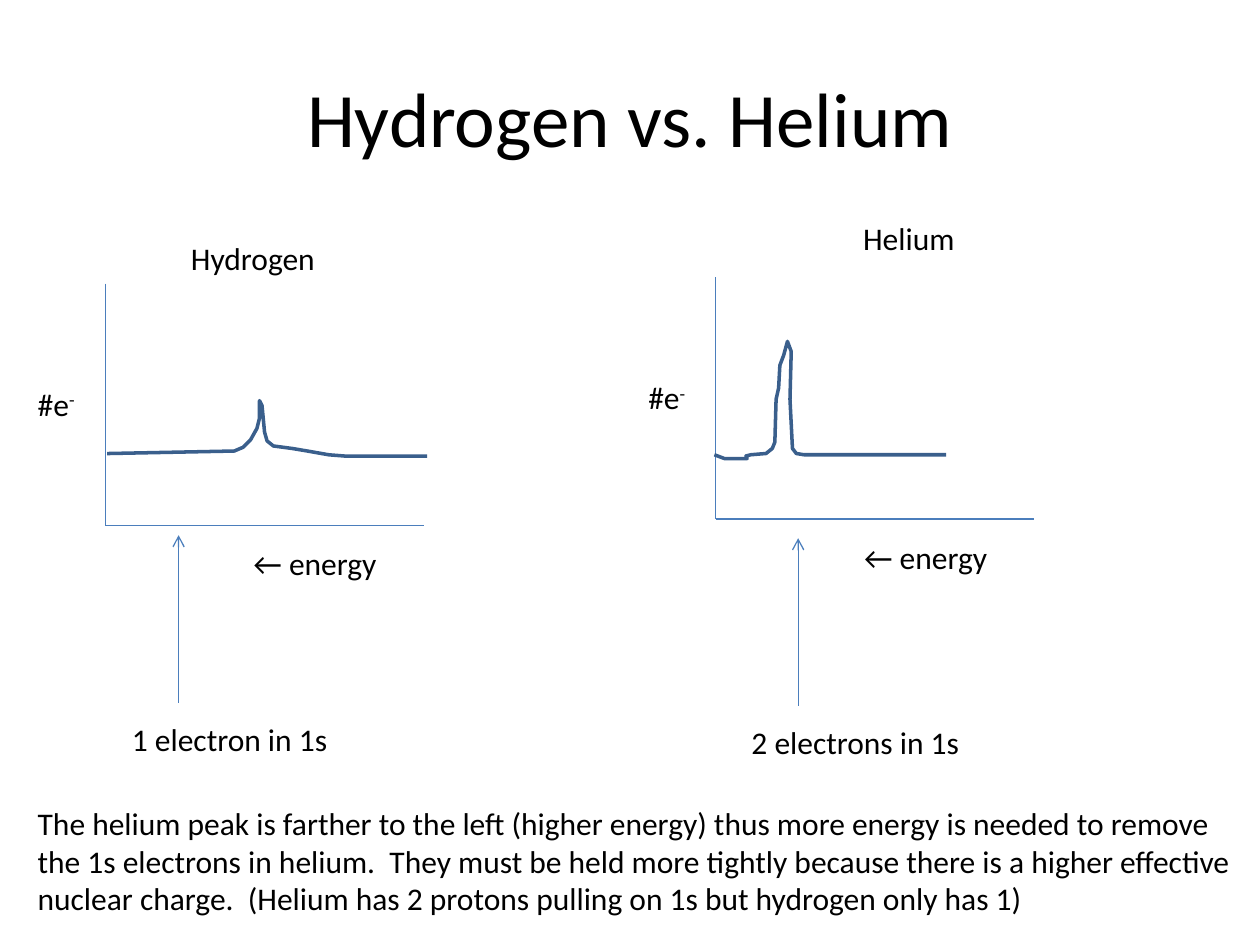
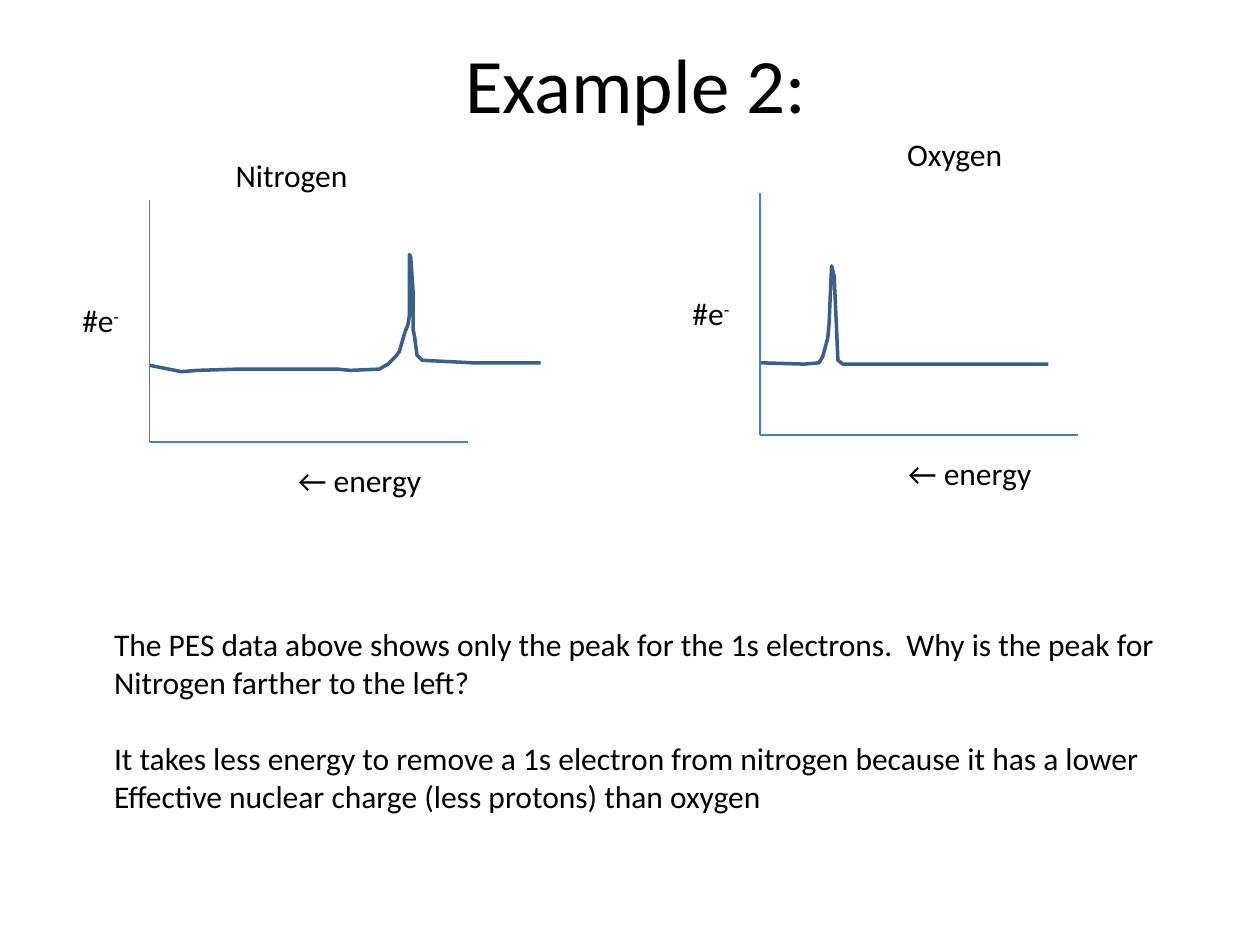
import lxml.etree
import pptx
import pptx.dml.color
import pptx.enum.shapes
import pptx.enum.text
import pptx.oxml.ns
import pptx.util
from pptx.util import Cm

FONT = "Calibri"
COLORS = {"text": "000000", "axis": "4B7EBC", "peak": "3A5F8C"}
TITLE_SIZE, TEXT_SIZE = 44, 18
LINE_HEIGHT = Cm(1.02)
AXIS_WIDTH, AXIS_HEIGHT = 6.42, 4.87
SPECTRUM_UNIT = Cm(2.54) / 100

# Points of each spectrum on the slide, in hundredths of 2.54 cm.
HYDROGEN = [
    (85, 360), (186, 358), (193, 355), (199, 349), (204, 340), (206, 332),
    (206, 318), (208, 322), (210, 343), (212, 350), (217, 354), (232, 356),
    (244, 358), (261, 361), (274, 362), (339, 362),
]
HELIUM = [
    (567, 361), (575, 364), (593, 364), (592, 362), (596, 361), (608, 360),
    (613, 356), (615, 351), (616, 317), (618, 308), (619, 290), (622, 282),
    (625, 271), (628, 279), (627, 317), (629, 356), (632, 360), (638, 361),
    (751, 361),
]
NITROGEN = [
    (119, 290), (144, 295), (157, 294), (189, 293), (268, 293), (278, 294),
    (301, 293), (308, 289), (314, 283), (317, 279), (321, 265), (324, 257),
    (325, 250), (325, 202), (326, 204), (328, 233), (328, 262), (329, 267),
    (331, 282), (335, 286), (375, 288), (429, 288),
]
OXYGEN = [
    (604, 288), (638, 289), (650, 288), (653, 283), (657, 268), (658, 257),
    (659, 234), (660, 211), (662, 219), (664, 262), (665, 286), (669, 289),
    (832, 289),
]


def rgb(name):
    return pptx.dml.color.RGBColor.from_string(COLORS[name])


def add_run(paragraph, text, size=TEXT_SIZE):
    run = paragraph.add_run()
    run.text = text
    run.font.name = FONT
    run.font.size = pptx.util.Pt(size)
    run.font.color.rgb = rgb("text")
    return run


def add_titled_slide(deck, title, left, top):
    slide = deck.slides.add_slide(deck.slide_layouts[5])
    heading = slide.shapes.title
    heading.left, heading.top = Cm(left), Cm(top)
    heading.width, heading.height = Cm(22.86), Cm(3.18)
    paragraph = heading.text_frame.paragraphs[0]
    paragraph.alignment = pptx.enum.text.PP_ALIGN.CENTER
    add_run(paragraph, title, TITLE_SIZE)
    return slide


def add_text(slide, left, top, width, lines, height=LINE_HEIGHT):
    """Add unwrapped text, one paragraph a line, and return its paragraphs."""
    frame = slide.shapes.add_textbox(Cm(left), Cm(top), Cm(width), height).text_frame
    frame.word_wrap = False
    frame.auto_size = pptx.enum.text.MSO_AUTO_SIZE.SHAPE_TO_FIT_TEXT
    for index, line in enumerate(lines):
        paragraph = frame.add_paragraph() if index else frame.paragraphs[0]
        add_run(paragraph, line)
    return frame.paragraphs


def add_line(slide, x1, y1, x2, y2, arrow=False):
    line = slide.shapes.add_connector(
        pptx.enum.shapes.MSO_CONNECTOR.STRAIGHT, Cm(x1), Cm(y1), Cm(x2), Cm(y2))
    line.line.color.rgb = rgb("axis")
    line.line.width = pptx.util.Pt(0.75)
    properties = line._element.spPr
    if arrow:
        outline = properties.find(pptx.oxml.ns.qn("a:ln"))
        lxml.etree.SubElement(outline, pptx.oxml.ns.qn("a:tailEnd"), type="arrow")
    lxml.etree.SubElement(properties, pptx.oxml.ns.qn("a:effectLst"))


def add_spectrum(slide, points):
    builder = slide.shapes.build_freeform(*points[0], scale=SPECTRUM_UNIT)
    builder.add_line_segments(points[1:], close=False)
    spectrum = builder.convert_to_shape()
    spectrum.shadow.inherit = False
    spectrum.fill.background()
    spectrum.line.color.rgb = rgb("peak")
    spectrum.line.width = pptx.util.Pt(2)


def add_graph(slide, left, top, element, element_offset, element_width, points):
    """Draw axes from their top left corner, with labels and the spectrum."""
    bottom = top + AXIS_HEIGHT
    dx, dy = element_offset
    add_text(slide, left + dx, top + dy, element_width, [element])
    add_line(slide, left, top, left, bottom)
    add_line(slide, left, bottom, left + AXIS_WIDTH, bottom)
    electrons = add_text(slide, left - 1.61, top + 1.91, 1.3, ["#e"])[0]
    charge = add_run(electrons, "-")
    charge.font._element.set("baseline", "30000")
    add_text(slide, left + 2.74, top + 5.13, 3.07, ["← energy"])
    add_spectrum(slide, points)


def add_peak_note(slide, x, top, note, width):
    """Add an upward arrow with a note below its foot."""
    foot = top + 3.38
    add_line(slide, x, foot, x, top, arrow=True)
    add_text(slide, x - 1.19, foot + 0.22, width, [note])


def main():
    deck = pptx.Presentation()
    deck.slide_width, deck.slide_height = Cm(25.4), Cm(19.05)
    left_label, right_label = (1.48, -1.02), (2.72, -1.3)

    comparison = add_titled_slide(deck, "Hydrogen vs. Helium", 1.27, 0.76)
    add_graph(comparison, 2.12, 5.72, "Hydrogen", left_label, 3.05, HYDROGEN)
    add_graph(comparison, 14.43, 5.59, "Helium", right_label, 2.39, HELIUM)
    add_peak_note(comparison, 3.6, 10.79, "1 electron in 1s", 4.5)
    add_peak_note(comparison, 16.09, 10.85, "2 electrons in 1s", 4.75)
    add_text(comparison, 0.51, 16.08, 25.6, [
        "The helium peak is farther to the left (higher energy) thus more energy is needed to remove",
        "the 1s electrons in helium.  They must be held more tightly because there is a higher effective",
        "nuclear charge.  (Helium has 2 protons pulling on 1s but hydrogen only has 1)",
    ], Cm(2.57))

    example = add_titled_slide(deck, "Example 2:", 1.39, 0.08)
    add_graph(example, 3.02, 4.04, "Nitrogen", left_label, 2.79, NITROGEN)
    add_graph(example, 15.32, 3.9, "Oxygen", right_label, 2.44, OXYGEN)
    discussion = add_text(example, 2.05, 12.48, 21.74, [
        "The PES data above shows only the peak for the 1s electrons.  Why is the peak for",
        "Nitrogen farther to the left?",
        "It takes less energy to remove a 1s electron from nitrogen because it has a lower",
        "Effective nuclear charge (less protons) than oxygen",
    ], Cm(4.11))
    discussion[2].space_before = pptx.util.Pt(22)

    deck.save("out.pptx")


if __name__ == "__main__":
    main()
